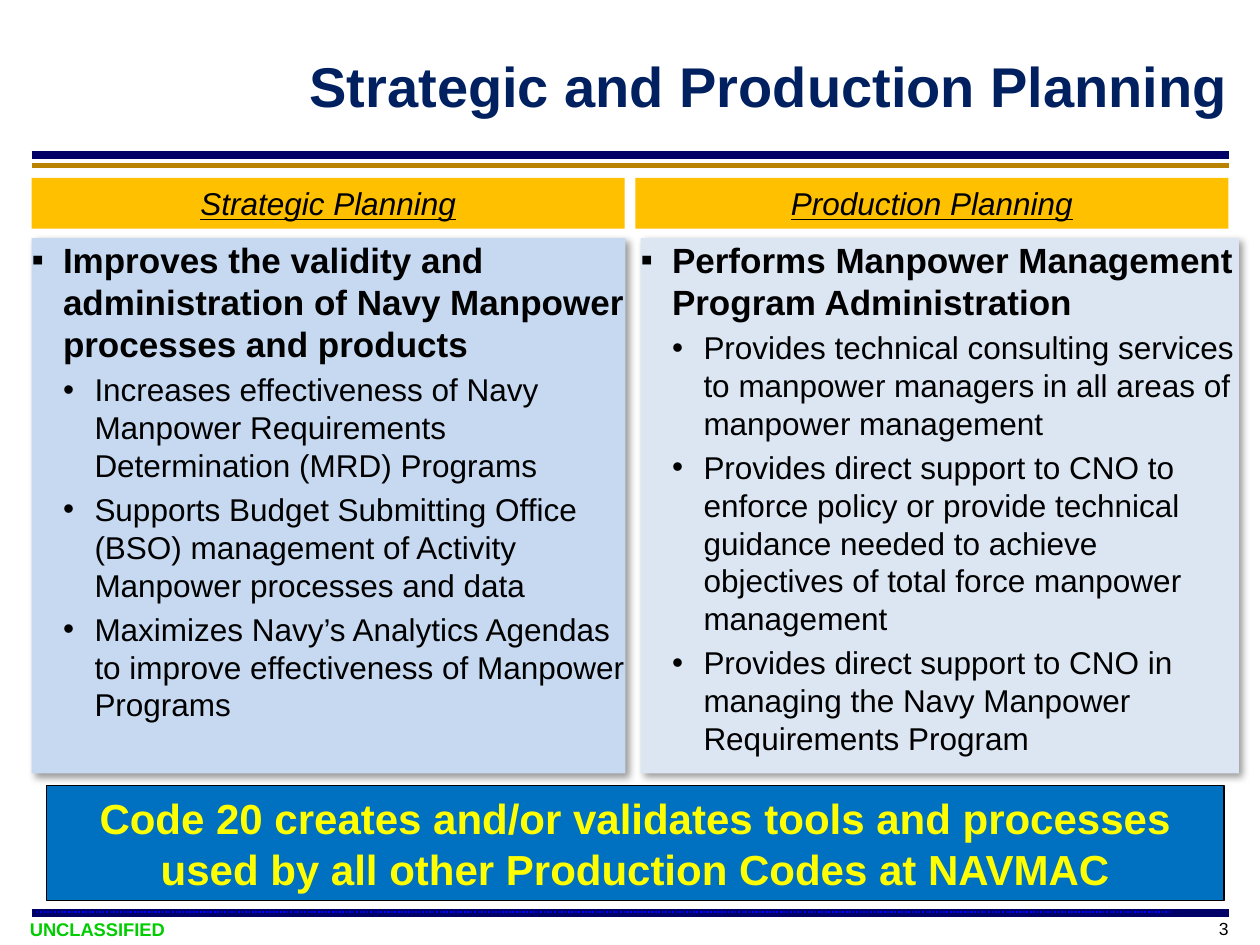
from lxml import etree
from pptx import Presentation
from pptx.dml.color import RGBColor
from pptx.enum.dml import MSO_LINE
from pptx.enum.shapes import MSO_CONNECTOR, MSO_SHAPE
from pptx.enum.text import MSO_ANCHOR, PP_ALIGN
from pptx.oxml.ns import qn
from pptx.util import Pt

RECT = MSO_SHAPE.RECTANGLE
STRAIGHT = MSO_CONNECTOR.STRAIGHT
DOTTED = MSO_LINE.ROUND_DOT
TOP, MIDDLE = MSO_ANCHOR.TOP, MSO_ANCHOR.MIDDLE
LEFT, CENTER, RIGHT = PP_ALIGN.LEFT, PP_ALIGN.CENTER, PP_ALIGN.RIGHT

FONT = "Arial"
COLORS = {
    "title": "002060", "navy": "000066", "gold": "B98200", "blue": "0000FF",
    "heading": "FFC000", "strategic": "C6D9F1", "production": "DCE6F2",
    "banner": "0070C0", "yellow": "FFFF00", "green": "00CC00", "black": "000000",
}
BULLETS = ["▪", "•"]
STRATEGIC = [
    (0, "Improves the validity and administration of Navy Manpower processes and products"),
    (1, "Increases effectiveness of Navy Manpower Requirements Determination (MRD) Programs"),
    (1, "Supports Budget Submitting Office (BSO) management of Activity Manpower processes and data"),
    (1, "Maximizes Navy’s Analytics Agendas to improve effectiveness of Manpower Programs"),
]
PRODUCTION = [
    (0, "Performs Manpower Management Program Administration"),
    (1, "Provides technical consulting services to manpower managers in all areas of manpower management"),
    (1, "Provides direct support to CNO to enforce policy or provide technical guidance needed "
        "to achieve objectives of total force manpower management"),
    (1, "Provides direct support to CNO in managing the Navy Manpower Requirements Program"),
]


def rgb(name):
    """Return the named colour."""
    return RGBColor.from_string(COLORS[name])


def style(p, size, color, bold=False, italic=False, underline=False):
    """Format every run of a paragraph."""
    for r in p.runs:
        f = r.font
        f.name, f.size, f.color.rgb = FONT, Pt(size), rgb(color)
        f.bold, f.italic, f.underline = bold, italic, underline


def set_frame(sp, anchor, insets=(7.2, 3.6, 7.2, 3.6), wrap=True):
    """Set the wrap, anchor and insets of a shape and return its text frame."""
    tf = sp.text_frame
    tf.word_wrap, tf.vertical_anchor = wrap, anchor
    tf.margin_left, tf.margin_top, tf.margin_right, tf.margin_bottom = map(Pt, insets)
    return tf


def add_label(s, box, text, size, color, align, anchor, right=7.2, wrap=True, bold=False):
    """Add a one-line text box."""
    sp = s.shapes.add_textbox(*map(Pt, box))
    tf = set_frame(sp, anchor, (7.2, 3.6, right, 3.6), wrap)
    tf.text = text
    tf.paragraphs[0].alignment = align
    style(tf.paragraphs[0], size, color, bold)


def add_box(s, box, fill, line=None):
    """Add a filled rectangle with an optional thin outline."""
    sp = s.shapes.add_shape(RECT, *map(Pt, box))
    sp.shadow.inherit = False
    sp.fill.solid()
    sp.fill.fore_color.rgb = rgb(fill)
    if line:
        sp.line.color.rgb = rgb(line)
        sp.line.width = Pt(0.75)
    else:
        sp.line.fill.background()
    return sp


def add_caption(s, box, text, fill, size, color, line=None, **font):
    """Add a filled rectangle with centred text."""
    tf = set_frame(add_box(s, box, fill, line), MIDDLE)
    tf.text = text
    tf.paragraphs[0].alignment = CENTER
    style(tf.paragraphs[0], size, color, **font)


def add_rule(s, x, y, width, color, weight, dash=None):
    """Add a horizontal rule."""
    ln = s.shapes.add_connector(STRAIGHT, Pt(x), Pt(y), Pt(x + width), Pt(y))
    ln.line.color.rgb = rgb(color)
    ln.line.width = Pt(weight)
    if dash:
        ln.line.dash_style = dash
    etree.SubElement(ln._element.spPr, qn("a:effectLst"))


def add_shadow(sp):
    """Give a shape a soft shadow towards the lower right."""
    effects = sp._element.spPr.find(qn("a:effectLst"))
    shadow = etree.SubElement(effects, qn("a:outerShdw"), blurRad=str(Pt(4)),
                              dist=str(Pt(3)), dir="2700000", algn="tl", rotWithShape="0")
    clr = etree.SubElement(shadow, qn("a:srgbClr"), val=COLORS["black"])
    etree.SubElement(clr, qn("a:alpha"), val="40000")


def set_bullet(p, level):
    """Give a paragraph the bullet and hanging indent of its level."""
    p.level = level
    pPr = p._p.get_or_add_pPr()
    pPr.set("marL", str(Pt(18 * (level + 1))))
    pPr.set("indent", str(-Pt(18)))
    etree.SubElement(pPr, qn("a:buFont"), typeface=FONT)
    etree.SubElement(pPr, qn("a:buChar"), char=BULLETS[level])


def add_panel(s, box, fill, items):
    """Add a shadowed panel with a bulleted list."""
    sp = add_box(s, box, fill)
    add_shadow(sp)
    tf = set_frame(sp, TOP, (0, 0, 0, 0))
    for i, (level, text) in enumerate(items):
        p = tf.add_paragraph() if i else tf.paragraphs[0]
        p.text = text
        p.alignment = LEFT
        size = 20 - 2 * level
        if i:
            p.space_before = Pt(0.2 * size)
        set_bullet(p, level)
        style(p, size, "black", bold=level == 0)


def add_header(s, x, y, width):
    """Add the title and the double rule below it."""
    add_label(s, (x + 18, y, width - 18, 61), "Strategic and Production Planning",
              32, "title", RIGHT, MIDDLE, right=0, bold=True)
    add_rule(s, x, y + 70.6, width, "navy", 4.5)
    add_rule(s, x, y + 76.5, width, "gold", 2.75)


def add_footer(s, x, y, width):
    """Add the bottom rules, the marking and the page number."""
    add_rule(s, x, y + 0.5, width, "navy", 4.5)
    add_rule(s, x + 3, y, 648, "blue", 1, DOTTED)
    add_label(s, (x - 8, y, 93, 19), "UNCLASSIFIED", 10.5, "green", LEFT, MIDDLE,
              wrap=False, bold=True)
    add_label(s, (x + width - 42, y, 42, 19), "3", 10, "black", RIGHT, TOP, right=0)


def main():
    """Build and save the slide."""
    prs = Presentation()
    prs.slide_width, prs.slide_height = Pt(720), Pt(540)
    s = prs.slides.add_slide(prs.slide_layouts[6])
    add_header(s, 18, 18, 684)
    columns = [
        (18, "Strategic Planning", 18, 339.4, "strategic", STRATEGIC),
        (363, "Production Planning", 366, 342, "production", PRODUCTION),
    ]
    for head_x, heading, x, width, fill, items in columns:
        add_caption(s, (head_x, 101.7, 339, 29), heading, "heading", 18, "black",
                    italic=True, underline=True)
        add_panel(s, (x, 136, width, 306), fill, items)
    add_caption(s, (26.5, 449, 673, 65.5),
                "Code 20 creates and/or validates tools and processes "
                "used by all other Production Codes at NAVMAC",
                "banner", 24, "yellow", line="black", bold=True)
    add_footer(s, 18, 521.3, 684)
    prs.save("out.pptx")


if __name__ == "__main__":
    main()
